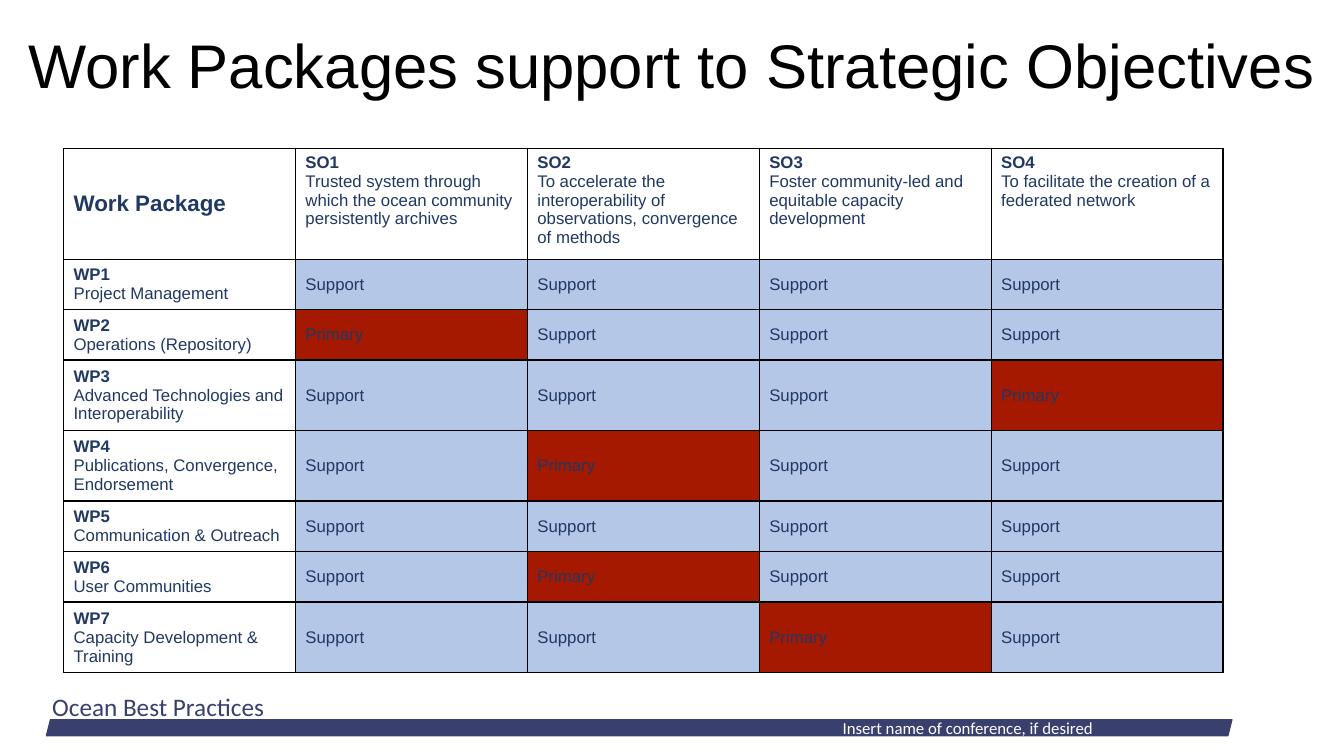
from dataclasses import dataclass
from typing import Optional

from lxml import etree
from pptx import Presentation
from pptx.dml.color import RGBColor
from pptx.enum.shapes import MSO_SHAPE
from pptx.enum.text import MSO_ANCHOR, MSO_AUTO_SIZE, PP_ALIGN
from pptx.oxml.ns import qn
from pptx.util import Emu, Pt

PARALLELOGRAM = MSO_SHAPE.PARALLELOGRAM
TOP, MIDDLE = MSO_ANCHOR.TOP, MSO_ANCHOR.MIDDLE
LEFT, CENTER = PP_ALIGN.LEFT, PP_ALIGN.CENTER
NO_AUTOFIT = MSO_AUTO_SIZE.NONE

EMU_PER_PX = 9144  # 100 px to the inch
COLORS = {
    "black": "000000",
    "white": "FFFFFF",
    "footer": "39406E",
    "table_text": "203864",
    "support": "B4C7E7",
    "primary": "A51900",
}
COLUMN_WIDTH = 230
HEADER_HEIGHT = 103
LINE_HEIGHT, ROW_PADDING = 19, 9


@dataclass(frozen=True)
class Objective:
    code: str
    goal: str


@dataclass(frozen=True)
class WorkPackage:
    code: str
    name: str
    lines: int
    primary: Optional[str] = None


OBJECTIVES = [
    Objective("SO1", "Trusted system through which the ocean community persistently archives"),
    Objective("SO2", "To accelerate the interoperability of observations, convergence of methods"),
    Objective("SO3", "Foster community-led and equitable capacity development"),
    Objective("SO4", "To facilitate the creation of a federated network"),
]
WORK_PACKAGES = [
    WorkPackage("WP1", "Project Management", 2),
    WorkPackage("WP2", "Operations (Repository)", 2, "SO1"),
    WorkPackage("WP3", "Advanced Technologies and Interoperability", 3, "SO4"),
    WorkPackage("WP4", "Publications, Convergence, Endorsement", 3, "SO2"),
    WorkPackage("WP5", "Communication & Outreach", 2),
    WorkPackage("WP6", "User Communities", 2, "SO2"),
    WorkPackage("WP7", "Capacity Development & Training", 3, "SO3"),
]


def px(length: int) -> Emu:
    return Emu(length * EMU_PER_PX)


def color(name: str) -> RGBColor:
    return RGBColor.from_string(COLORS[name])


def add_text(paragraph, text: str, *, size: int = 12, font: str = "Arial",
             fill: str = "table_text", bold: bool = False) -> None:
    run = paragraph.add_run()
    run.text = text
    run.font.size = Pt(size)
    run.font.name = font
    run.font.bold = bold
    run.font.color.rgb = color(fill)


def add_label(slide, text: str, left: int, top: int, width: int, height: int, *,
              size: int, fill: str, anchor=TOP, alignment=LEFT) -> None:
    frame = slide.shapes.add_textbox(px(left), px(top), px(width), px(height)).text_frame
    frame.word_wrap = True
    frame.vertical_anchor = anchor
    paragraph = frame.paragraphs[0]
    paragraph.alignment = alignment
    add_text(paragraph, text, size=size, font="Calibri", fill=fill)


def format_cell(cell, fill: str, *, anchor=MIDDLE, top: float = 1, bottom: float = 1) -> None:
    cell.vertical_anchor = anchor
    properties = cell._tc.get_or_add_tcPr()
    for side, points in (("L", 1), ("R", 1), ("T", top), ("B", bottom)):
        line = etree.SubElement(properties, qn(f"a:ln{side}"), w=str(Pt(points)))
        solid = etree.SubElement(line, qn("a:solidFill"))
        etree.SubElement(solid, qn("a:srgbClr"), val=COLORS["black"])
    cell.fill.solid()
    cell.fill.fore_color.rgb = color(fill)


def add_footer(slide) -> None:
    bar = slide.shapes.add_shape(PARALLELOGRAM, px(46), px(714), px(1176), px(16))
    bar.shadow.inherit = False
    bar.fill.solid()
    bar.fill.fore_color.rgb = color("footer")
    bar.line.color.rgb = color("footer")
    bar.line.width = Pt(0.75)
    add_label(slide, "Ocean Best Practices", 42, 681, 233, 40, size=18, fill="footer")
    add_label(slide, "Insert name of conference, if desired", 700, 705, 520, 34,
              size=12, fill="white", anchor=MIDDLE, alignment=CENTER)


def add_title(slide, text: str) -> None:
    title = slide.shapes.title
    title.left, title.top, title.width, title.height = px(18), px(8), px(1299), px(120)
    frame = title.text_frame
    frame.word_wrap = True
    frame.auto_size = NO_AUTOFIT
    frame.vertical_anchor = MIDDLE
    paragraph = frame.paragraphs[0]
    paragraph.alignment = LEFT
    paragraph.line_spacing = 0.9
    add_text(paragraph, text, size=44, fill="black")


def add_support_table(slide) -> None:
    heights = [HEADER_HEIGHT] + [package.lines * LINE_HEIGHT + ROW_PADDING
                                 for package in WORK_PACKAGES]
    column_count = len(OBJECTIVES) + 1
    table = slide.shapes.add_table(len(heights), column_count, px(63), px(147),
                                   px(column_count * COLUMN_WIDTH), px(sum(heights))).table
    table.first_row = False
    table.horz_banding = False
    for column in table.columns:
        column.width = px(COLUMN_WIDTH)
    for row, height in zip(table.rows, heights):
        row.height = px(height)

    # Header row
    corner = table.cell(0, 0)
    format_cell(corner, "white")
    add_text(corner.text_frame.paragraphs[0], "Work Package", size=16, bold=True)
    for column_index, objective in enumerate(OBJECTIVES, start=1):
        cell = table.cell(0, column_index)
        format_cell(cell, "white", anchor=TOP)
        add_text(cell.text_frame.paragraphs[0], objective.code, bold=True)
        add_text(cell.text_frame.add_paragraph(), objective.goal)

    # Work package rows, with a heavier rule between WP4 and WP5
    for row_index, package in enumerate(WORK_PACKAGES, start=1):
        rules = {"top": 1.25 if package.code == "WP5" else 1,
                 "bottom": 1.25 if package.code == "WP4" else 1}
        cell = table.cell(row_index, 0)
        format_cell(cell, "white", **rules)
        paragraph = cell.text_frame.paragraphs[0]
        add_text(paragraph, package.code, bold=True)
        paragraph.add_line_break()
        add_text(paragraph, package.name)
        for column_index, objective in enumerate(OBJECTIVES, start=1):
            role = "primary" if package.primary == objective.code else "support"
            cell = table.cell(row_index, column_index)
            format_cell(cell, role, **rules)
            add_text(cell.text_frame.paragraphs[0], role.capitalize())


def main() -> None:
    presentation = Presentation()
    presentation.slide_width, presentation.slide_height = px(1333), px(750)
    slide = presentation.slides.add_slide(presentation.slide_layouts.get_by_name("Title Only"))
    add_footer(slide)
    add_title(slide, "Work Packages support to Strategic Objectives")
    add_support_table(slide)
    presentation.save("out.pptx")


if __name__ == "__main__":
    main()
